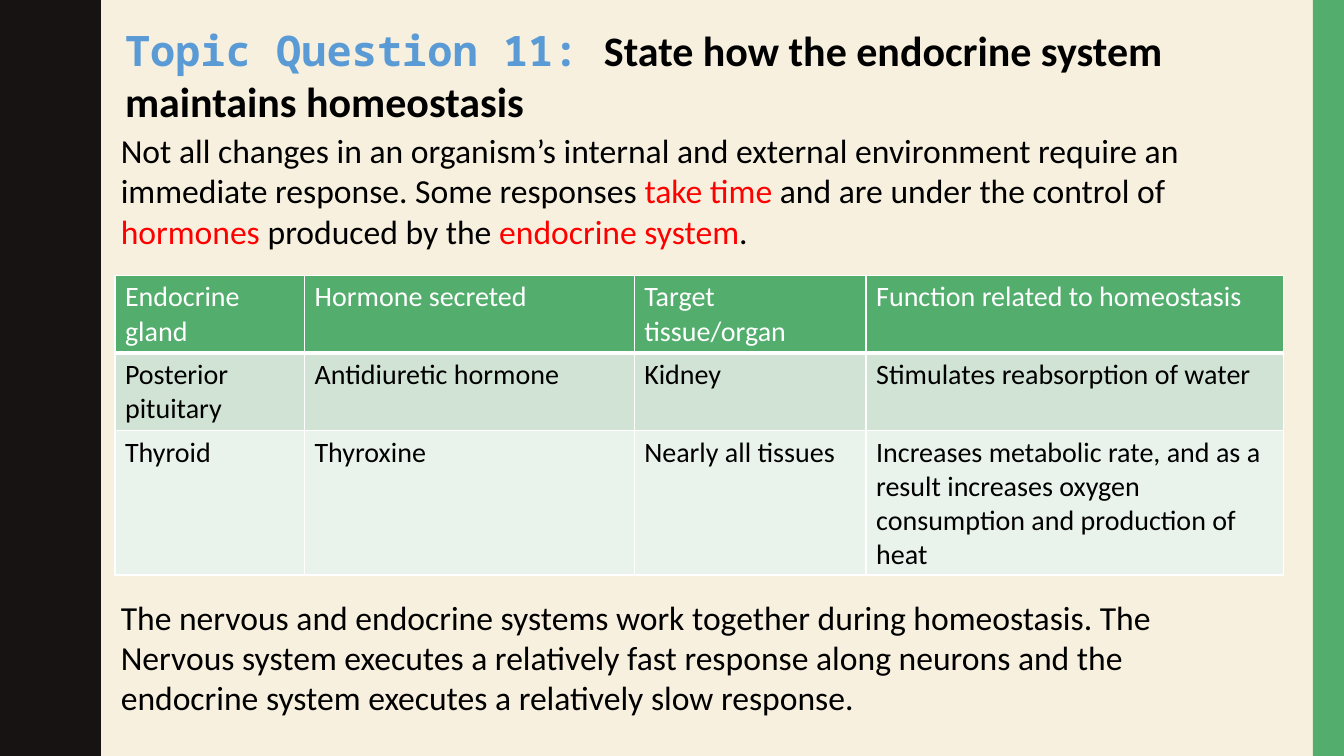
from math import cos, pi

from lxml.etree import SubElement
from pptx import Presentation
from pptx.dml.color import RGBColor
from pptx.enum.text import MSO_ANCHOR, MSO_AUTO_SIZE, PP_ALIGN
from pptx.oxml.ns import qn
from pptx.util import Inches, Pt

WIDTH, HEIGHT = 13.33, 7.5
COLORS = {
    "background": "F7F0DF", "wave": "171312", "green": "53AE6E",
    "text": "000000", "white": "FFFFFF", "key": "FF0000", "question": "5B9BD5",
    "odd row": "D1E3D5", "even row": "E9F2EB",
}
BODY_FONT, QUESTION_FONT = "Calibri", "Noto Sans Mono"

TITLE = [("Topic Question 11: ", "question"),
         ("State how the endocrine system maintains homeostasis", "text")]
INTRODUCTION = [[
    ("Not all changes in an organism’s internal and external environment require an "
     "immediate response. Some responses ", "text"),
    ("take time ", "key"),
    ("and are under the control of ", "text"),
    ("hormones", "key"),
    (" produced by the ", "text"),
    ("endocrine system", "key"),
    (".", "text"),
]]
CONCLUSION = [[(line, "text")] for line in (
    "The nervous and endocrine systems work together during homeostasis. The",
    "Nervous system executes a relatively fast response along neurons and the",
    "endocrine system executes a relatively slow response.",
)]
GLANDS = [
    ("Endocrine gland", "Hormone secreted", "Target tissue/organ",
     "Function related to homeostasis"),
    ("Posterior pituitary", "Antidiuretic hormone", "Kidney",
     "Stimulates reabsorption of water"),
    ("Thyroid", "Thyroxine", "Nearly all tissues",
     "Increases metabolic rate, and as a result increases oxygen consumption "
     "and production of heat"),
]
COLUMN_WIDTHS = (1.88, 3.27, 2.3, 4.14)
ROW_HEIGHTS = (0.77, 0.77, 1.43)


def color(name):
    return RGBColor.from_string(COLORS[name])


def inches(box):
    return [Inches(length) for length in box]


def paint(shape, name):
    shape.fill.solid()
    shape.fill.fore_color.rgb = color(name)
    shape.line.fill.background()
    shape.shadow.inherit = False


def format_run(run, size, color_name, font=BODY_FONT, bold=False):
    run.font.name = font
    run.font.size = Pt(size)
    run.font.bold = bold
    run.font.color.rgb = color(color_name)


def add_wave_edge(slide, box, waves=5, steps=24):
    """Band whose right edge swings between a trough and the full width."""
    left, top, width, height = box
    amplitude = 0.1 * width
    middle = left + width - amplitude
    count = waves * steps
    edge = [(middle - amplitude * cos(2 * pi * i / steps), top + height * i / count)
            for i in range(count + 1)]
    outline = slide.shapes.build_freeform(left, top, scale=Inches(1))
    outline.add_line_segments(edge + [(left, top + height)], close=True)
    paint(outline.convert_to_shape(), "wave")


def add_side_bar(slide, box):
    bar = slide.shapes.add_shape(1, *inches(box))
    paint(bar, "green")


def add_title(slide, box):
    title = slide.shapes.title
    title.left, title.top, title.width, title.height = inches(box)
    frame = title.text_frame
    frame.word_wrap = True
    frame.auto_size = MSO_AUTO_SIZE.NONE
    frame.vertical_anchor = MSO_ANCHOR.MIDDLE
    heading = frame.paragraphs[0]
    heading.alignment = PP_ALIGN.LEFT
    for words, color_name in TITLE:
        run = heading.add_run()
        run.text = words
        font = QUESTION_FONT if color_name == "question" else BODY_FONT
        format_run(run, 30, color_name, font, bold=True)


def add_body_text(slide, box, paragraphs):
    frame = slide.shapes.add_textbox(*inches(box)).text_frame
    frame.word_wrap = True
    for i, pieces in enumerate(paragraphs):
        paragraph = frame.add_paragraph() if i else frame.paragraphs[0]
        for words, color_name in pieces:
            run = paragraph.add_run()
            run.text = words
            format_run(run, 24, color_name)


def add_borders(cell, bottom):
    properties = cell._tc.get_or_add_tcPr()
    for side, points in (("L", 1), ("R", 1), ("T", 1), ("B", bottom)):
        border = SubElement(properties, qn(f"a:ln{side}"), w=str(Pt(points)))
        fill = SubElement(border, qn("a:solidFill"))
        SubElement(fill, qn("a:srgbClr"), val=COLORS["white"])


def add_gland_table(slide, left, top):
    box = (left, top, sum(COLUMN_WIDTHS), sum(ROW_HEIGHTS))
    table = slide.shapes.add_table(len(GLANDS), len(COLUMN_WIDTHS), *inches(box)).table
    for column, width in zip(table.columns, COLUMN_WIDTHS):
        column.width = Inches(width)
    fills = ("green", "odd row", "even row")
    for r, (entries, height) in enumerate(zip(GLANDS, ROW_HEIGHTS)):
        table.rows[r].height = Inches(height)
        for c, entry in enumerate(entries):
            cell = table.cell(r, c)
            cell.text_frame.text = entry
            format_run(cell.text_frame.paragraphs[0].runs[0], 20,
                       "text" if r else "white")
            add_borders(cell, bottom=1 if r else 3)
            cell.fill.solid()
            cell.fill.fore_color.rgb = color(fills[r])


def main():
    deck = Presentation()
    deck.slide_width, deck.slide_height = Inches(WIDTH), Inches(HEIGHT)
    slide = deck.slides.add_slide(deck.slide_layouts[5])
    slide.background.fill.solid()
    slide.background.fill.fore_color.rgb = color("background")

    bar_width = 0.31
    text_left, table_left = 1.1, 1.14
    add_wave_edge(slide, (0, 0, 0.97, HEIGHT))
    add_side_bar(slide, (WIDTH - bar_width, 0, bar_width, HEIGHT))
    add_title(slide, (table_left, 0.16, 11.86, 1.17))
    add_body_text(slide, (text_left, 1.24, 11.13, 1.31), INTRODUCTION)
    add_gland_table(slide, table_left, 2.73)
    add_body_text(slide, (text_left, 5.87, 11.54, 1.31), CONCLUSION)
    deck.save("out.pptx")


if __name__ == "__main__":
    main()
